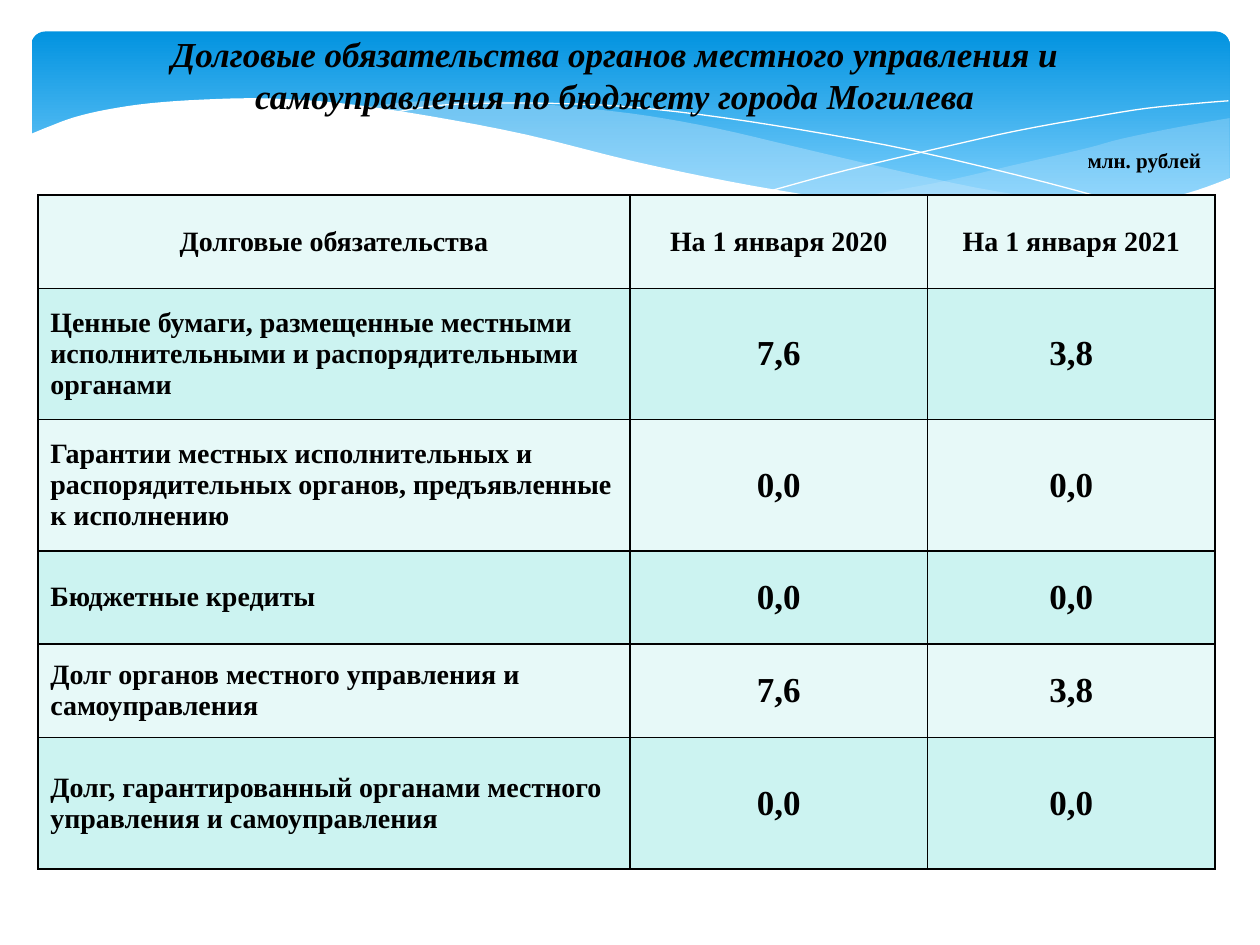
from pptx import Presentation
from pptx.dml.color import RGBColor
from pptx.enum.shapes import MSO_SHAPE
from pptx.enum.text import MSO_ANCHOR, PP_ALIGN
from pptx.oxml.ns import qn
from pptx.util import Pt
from lxml import etree

ROUND = MSO_SHAPE.ROUNDED_RECTANGLE
LEFT, MID, RIGHT = PP_ALIGN.LEFT, PP_ALIGN.CENTER, PP_ALIGN.RIGHT
FONT = "Times New Roman"
BLACK = RGBColor(0, 0, 0)
WHITE = RGBColor(255, 255, 255)
DEEP = RGBColor(0x02, 0x93, 0xE0)
SKY = RGBColor(0x83, 0xD3, 0xFE)
MIST = RGBColor(0xC6, 0xE7, 0xFC)
BANDS = [RGBColor(0xE7, 0xF9, 0xF8), RGBColor(0xCC, 0xF3, 0xF1)]

TITLE = ("Долговые обязательства органов местного управления и "
         "самоуправления по бюджету города Могилева")
UNIT = "млн. рублей"
ROWS = [
    ("Долговые обязательства", "На 1 января 2020", "На 1 января 2021"),
    ("Ценные бумаги, размещенные местными исполнительными и "
     "распорядительными органами", "7,6", "3,8"),
    ("Гарантии местных исполнительных и распорядительных органов, "
     "предъявленные к исполнению", "0,0", "0,0"),
    ("Бюджетные кредиты", "0,0", "0,0"),
    ("Долг органов местного управления и самоуправления", "7,6", "3,8"),
    ("Долг, гарантированный органами местного управления и самоуправления",
     "0,0", "0,0"),
]
WIDTHS = [338.4, 170, 164.4]
HEIGHTS = [53.4, 75, 75, 53.4, 53.4, 75]

# Knots of each smooth edge, in points
RIGHT_TOP = [(702.7, 67.5), (673.2, 72.7), (641.5, 79.2), (619.9, 85),
             (579.6, 94.3), (542.2, 103), (508.3, 109.4), (475.9, 115.2)]
RIGHT_LOW = [(475.9, 115.2), (507.6, 118.8), (536.4, 121.7), (562.3, 123.8),
             (586.1, 123.8), (614.9, 122.4), (640.1, 119.5), (663.1, 115.2),
             (683.3, 109.4), (702.7, 101.5)]
MAIN_TOP = [(643, 120.2), (602.6, 114.5), (558, 107.3), (508.3, 96.5),
            (452.9, 83.5), (409.7, 73.4), (370.1, 66.2), (334.8, 61.9),
            (302.4, 59), (273.6, 57.6), (247.7, 57.6), (225.4, 59),
            (205.9, 61.9)]
MAIN_LOW = [(205.9, 61.9), (232.6, 64.8), (260.6, 69.8), (290.9, 76.3),
            (323.3, 83.5), (381.6, 97.2), (432.7, 108), (478.8, 115.9),
            (519.8, 121), (556.6, 123.8), (589, 124.6), (617, 123.1),
            (643, 120.2)]
FALL = [(222.5, 64.8), (247.7, 60.5), (278.6, 59), (311.8, 59), (352.1, 60.5),
        (400.3, 65.5), (457.9, 74.2), (523.4, 86.4), (598.3, 104.4),
        (653, 119.5)]
RISE = [(441.4, 108.7), (483.8, 97.2), (538.6, 84.2), (580.3, 74.9),
        (623.5, 67), (655.2, 61.9), (684.7, 59), (702, 57.6)]
PAGE_TOP = [(703.4, 101.5), (684, 108.7), (662.4, 114.5), (638.6, 119.5),
            (612, 122.4), (582.5, 123.1), (547.9, 122.4), (509.8, 118.8),
            (466.6, 112.3), (416.9, 103.7), (362.2, 92.2), (301, 77),
            (244.8, 66.2), (195.1, 59), (151.9, 56.2), (115.9, 56.9),
            (85.7, 59), (61.2, 62.6), (42.5, 67), (28.8, 72), (16.6, 77)]
PAGE_LOW = [(16.6, 161), (703.4, 161)]

# Edges, fill, opacity in percent; no fill means a white hairline
WAVES = [
    ([RIGHT_TOP, RIGHT_LOW], MIST, 29),
    ([MAIN_TOP, MAIN_LOW], MIST, 40),
    ([FALL], None, 100),
    ([RISE], None, 100),
    ([PAGE_TOP, PAGE_LOW], WHITE, 100),
]


def smooth(knots, steps=4):
    """Sample a Catmull-Rom curve through the knots."""
    if len(knots) < 3:
        return knots
    ends = [knots[0], *knots, knots[-1]]
    curve = [knots[0]]
    for a, b, c, d in zip(ends, ends[1:], ends[2:], ends[3:]):
        for n in range(1, steps + 1):
            t = n / steps
            curve.append(tuple(
                q + t * (r - p + t * (2 * p - 5 * q + 4 * r - s
                                      + t * (3 * q - p - 3 * r + s))) / 2
                for p, q, r, s in zip(a, b, c, d)))
    return curve


def add_wave(shapes, edges, fill, alpha):
    dots = [(Pt(x), Pt(y)) for edge in edges for x, y in smooth(edge)]
    pen = shapes.build_freeform(*dots[0])
    pen.add_line_segments(dots[1:], close=fill is not None)
    wave = pen.convert_to_shape()
    wave.shadow.inherit = False
    if fill is None:
        wave.fill.background()
        wave.line.color.rgb = WHITE
        wave.line.width = Pt(0)
        return
    wave.fill.solid()
    wave.fill.fore_color.rgb = fill
    wave.line.fill.background()
    if alpha < 100:
        tint = wave.fill._xPr.find(".//" + qn("a:srgbClr"))
        etree.SubElement(tint, qn("a:alpha"), val=str(alpha * 1000))


def write(frame, text, size, align, italic=False):
    para = frame.paragraphs[0]
    para.alignment = align
    run = para.add_run()
    run.text = text
    font = run.font
    font.name, font.size, font.bold, font.italic = FONT, Pt(size), True, italic
    font.color.rgb = BLACK


def add_label(shapes, box, text, size, align, wrap, italic=False):
    frame = shapes.add_textbox(*map(Pt, box)).text_frame
    frame.word_wrap = wrap
    write(frame, text, size, align, italic)


def add_borders(cell):
    props = cell._tc.get_or_add_tcPr()
    for n, side in enumerate(("lnL", "lnR", "lnT", "lnB")):
        line = etree.Element(qn("a:" + side), w=str(Pt(1)))
        ink = etree.SubElement(line, qn("a:solidFill"))
        etree.SubElement(ink, qn("a:srgbClr"), val=str(BLACK))
        props.insert(n, line)


def add_debts(shapes):
    box = map(Pt, (21.6, 111.4, sum(WIDTHS), sum(HEIGHTS)))
    table = shapes.add_table(len(ROWS), len(WIDTHS), *box).table
    for col, width in zip(table.columns, WIDTHS):
        col.width = Pt(width)
    for i, (texts, height) in enumerate(zip(ROWS, HEIGHTS)):
        table.rows[i].height = Pt(height)
        for j, text in enumerate(texts):
            cell = table.cell(i, j)
            cell.vertical_anchor = MSO_ANCHOR.MIDDLE
            cell.fill.solid()
            cell.fill.fore_color.rgb = BANDS[i % 2]
            add_borders(cell)
            write(cell.text_frame, text, 20 if i and j else 16,
                  LEFT if i and not j else MID)


def main():
    deck = Presentation()
    deck.slide_width, deck.slide_height = Pt(720), Pt(540)
    shapes = deck.slides.add_slide(deck.slide_layouts[6]).shapes

    banner = shapes.add_shape(ROUND, Pt(18), Pt(18), Pt(684.7), Pt(112.3))
    banner.adjustments[0] = 0.07
    banner.shadow.inherit = False
    banner.line.fill.background()
    banner.fill.gradient()
    banner.fill.gradient_angle = 270
    for stop, color, place in zip(banner.fill.gradient_stops,
                                  (DEEP, SKY), (0, 0.9)):
        stop.color.rgb = color
        stop.position = place

    for wave in WAVES:
        add_wave(shapes, *wave)
    add_label(shapes, (36.7, 15.1, 629.3, 55.4), TITLE, 20, MID, True, True)
    add_debts(shapes)
    add_label(shapes, (610.6, 80.6, 82.8, 21.6), UNIT, 12, RIGHT, False)
    deck.save("out.pptx")


if __name__ == "__main__":
    main()
